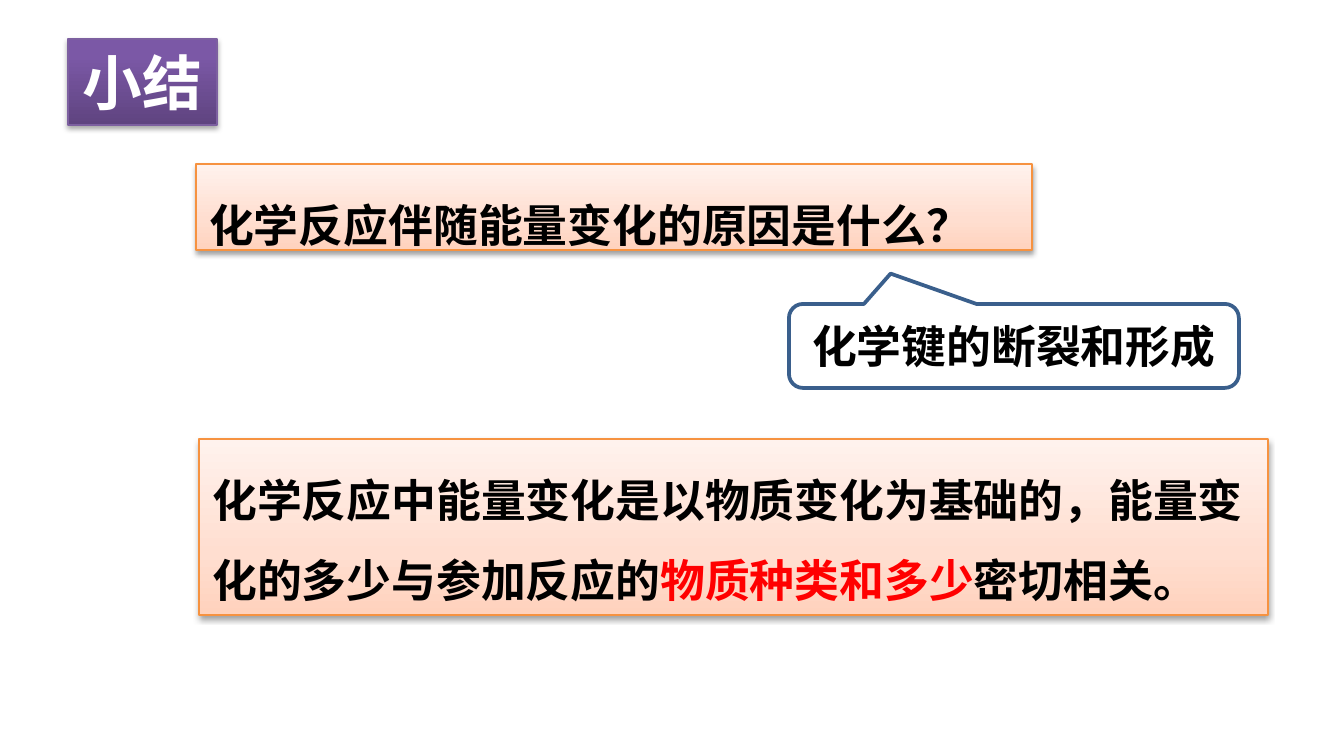
import copy

import pptx
import pptx.dml.color
import pptx.enum.dml
import pptx.enum.shapes
import pptx.enum.text
import pptx.oxml
import pptx.oxml.ns
import pptx.util

RGB = pptx.dml.color.RGBColor
SHAPES = pptx.enum.shapes.MSO_SHAPE
ALIGN = pptx.enum.text.PP_ALIGN
qn = pptx.oxml.ns.qn

EMU_PER_PX = 914400 / 134.4
BLACK = RGB(0x00, 0x00, 0x00)
WHITE = RGB(0xFF, 0xFF, 0xFF)
RED = RGB(0xFF, 0x00, 0x00)
ORANGE = RGB(0xF6, 0x92, 0x40)
PURPLE = RGB(0x7D, 0x60, 0xA0)
BLUE = RGB(0x3A, 0x5F, 0x8C)
PURPLE_STOPS = [(0, RGB(0x5F, 0x44, 0x80)), (0.8, RGB(0x7B, 0x58, 0xA6)), (1, RGB(0x7C, 0x57, 0xA8))]
PEACH_STOPS = [(0, RGB(0xFF, 0xD2, 0xBD)), (0.35, RGB(0xFF, 0xDE, 0xD0)), (1, RGB(0xFF, 0xF2, 0xED))]
TITLE = {"size": 32, "wrap": False, "align": ALIGN.CENTER, "spacing": 1.0}
LABEL = {"size": 24, "wrap": False, "align": ALIGN.LEFT, "spacing": 1.0}
BODY = {"size": 24, "wrap": True, "align": ALIGN.LEFT, "spacing": 1.5}


def px(value):
    """Turn pixels into EMU."""
    return pptx.util.Emu(round(value * EMU_PER_PX))


def apply(target, values):
    """Set each attribute of the target from a dict."""
    for name, value in values.items():
        setattr(target, name, value)


def write(shape, spans, style):
    """Fill one paragraph with (text, colour) spans."""
    frame = shape.text_frame
    apply(frame, {
        "word_wrap": style["wrap"],
        "auto_size": pptx.enum.text.MSO_AUTO_SIZE.SHAPE_TO_FIT_TEXT,
        "vertical_anchor": pptx.enum.text.MSO_ANCHOR.TOP,
    })
    para = frame.paragraphs[0]
    apply(para, {"alignment": style["align"], "line_spacing": style["spacing"]})
    for text, color in spans:
        span = para.add_run()
        span.text = text
        apply(span.font, {"name": "Calibri", "size": pptx.util.Pt(style["size"]), "bold": True})
        span.font.color.rgb = color


def outline(shape, color, width):
    """Give the shape a solid outline."""
    shape.line.color.rgb = color
    shape.line.width = pptx.util.Pt(width)


def shade(shape, stops):
    """Fill the shape with a gradient that runs from bottom to top."""
    shape.fill.gradient()
    shape.fill.gradient_angle = 90
    stop_list = shape._element.spPr.find(".//" + qn("a:gsLst"))
    stop_list.append(copy.deepcopy(stop_list[-1]))
    for stop, (position, color) in zip(shape.fill.gradient_stops, stops):
        stop.position = position
        stop.color.rgb = color


def drop_shadow(shape, distance, opacity):
    """Cast a soft black shadow straight down."""
    shape.shadow.inherit = False
    effects = shape._element.spPr.find(qn("a:effectLst"))
    effects.append(pptx.oxml.parse_xml(
        f'<a:outerShdw {pptx.oxml.ns.nsdecls("a")} blurRad="{pptx.util.Pt(3.1)}" '
        f'dist="{pptx.util.Pt(distance)}" dir="5400000" rotWithShape="0">'
        f'<a:srgbClr val="000000"><a:alpha val="{opacity * 1000}"/></a:srgbClr></a:outerShdw>'))


def add_panel(slide, bounds, stops, line_color, shadow, spans, style):
    """Add a shaded rectangle that holds text."""
    panel = slide.shapes.add_shape(SHAPES.RECTANGLE, *map(px, bounds))
    shade(panel, stops)
    outline(panel, line_color, 0.75)
    drop_shadow(panel, *shadow)
    write(panel, spans, style)


def add_callout(slide, bounds, text_bounds, text):
    """Add a speech bubble grouped with its label."""
    group = slide.shapes.add_group_shape()
    box = group.shapes.add_textbox(*map(px, text_bounds))
    write(box, [(text, BLACK)], LABEL)
    bubble = group.shapes.add_shape(SHAPES.ROUNDED_RECTANGULAR_CALLOUT, *map(px, bounds))
    for index, value in enumerate((-0.274, -0.861, 0.167)):
        bubble.adjustments[index] = value
    bubble.fill.background()
    bubble.shadow.inherit = False
    outline(bubble, BLUE, 2)


def main():
    """Build the summary slide."""
    deck = pptx.Presentation()
    apply(deck, {"slide_width": px(1344), "slide_height": px(756)})
    slide = deck.slides.add_slide(deck.slide_layouts[6])
    add_panel(slide, (68, 39, 149, 86), PURPLE_STOPS, PURPLE, (1.8, 35), [("小结", WHITE)], TITLE)
    add_panel(slide, (196, 164, 836, 86), PEACH_STOPS, ORANGE, (1.6, 38),
              [("化学反应伴随能量变化的原因是什么？", BLACK)], BODY)
    add_callout(slide, (789, 304, 450, 84), (799, 312, 436, 67), "化学键的断裂和形成")
    add_panel(slide, (199, 439, 1069, 176), PEACH_STOPS, ORANGE, (1.6, 38), [
        ("化学反应中能量变化是以物质变化为基础的，能量变化的多少与参加反应的", BLACK),
        ("物质种类和多少", RED),
        ("密切相关。", BLACK),
    ], BODY)
    deck.save("out.pptx")


if __name__ == "__main__":
    main()
